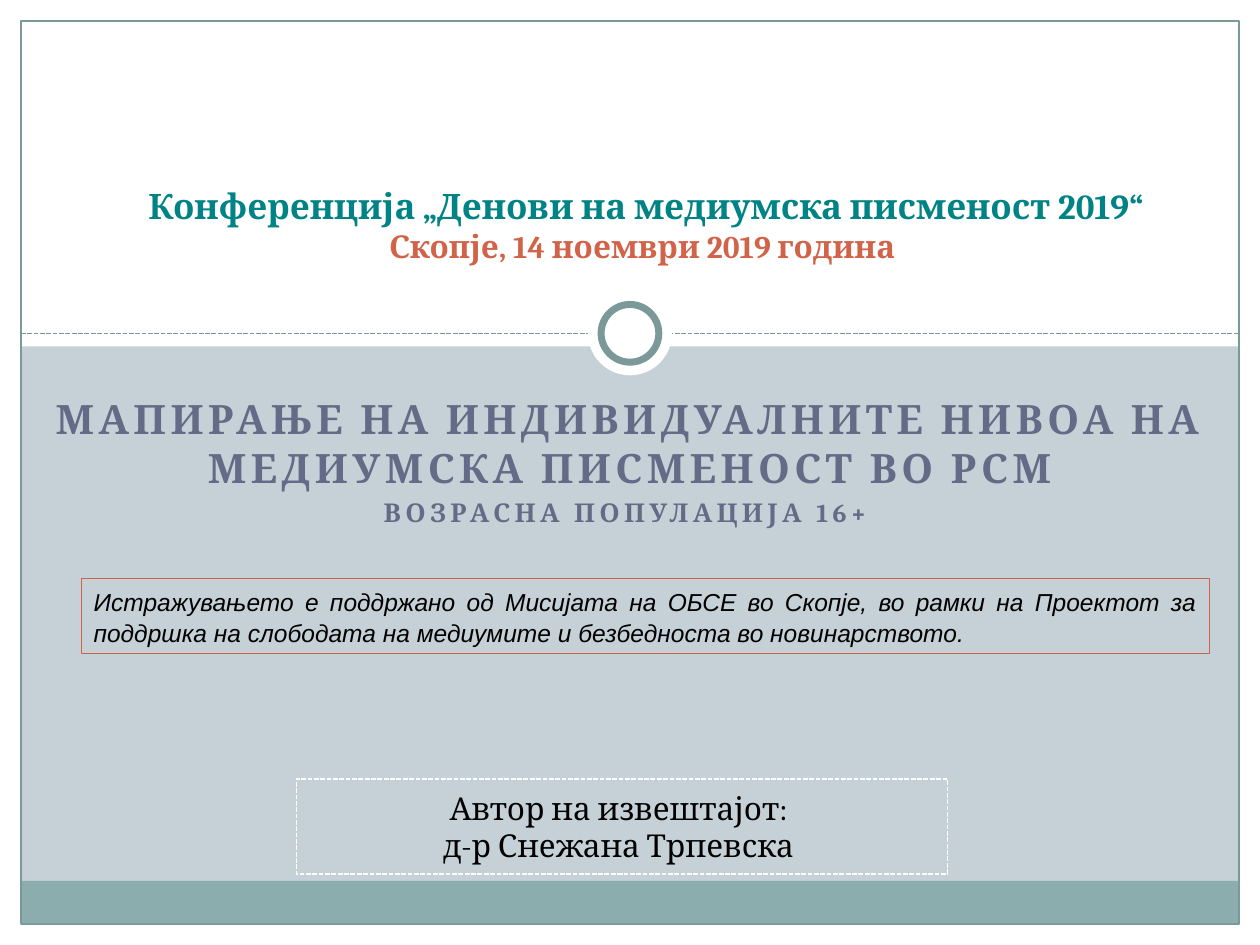
from lxml import etree
from pptx import Presentation
from pptx.dml.color import RGBColor
from pptx.enum import dml, shapes, text
from pptx.oxml import ns
from pptx.util import Pt

COLORS = {
    "backdrop": "C5D1D7", "white": "FFFFFF", "band": "8CADAE", "frame": "7C999A",
    "heading": "646B86", "teal": "008385", "rust": "D16349", "black": "000000",
}
RECT, OVAL = shapes.MSO_SHAPE.RECTANGLE, shapes.MSO_SHAPE.OVAL
CENTER, JUSTIFY = text.PP_ALIGN.CENTER, text.PP_ALIGN.JUSTIFY
TOP, MIDDLE, BOTTOM = text.MSO_ANCHOR.TOP, text.MSO_ANCHOR.MIDDLE, text.MSO_ANCHOR.BOTTOM


def add_panel(kind, box, fill=None, line=None, width=0.75, dash=None):
    panel = slide.shapes.add_shape(kind, *map(Pt, box))
    panel.shadow.inherit = False
    if fill:
        panel.fill.solid()
        panel.fill.fore_color.rgb = RGBColor.from_string(COLORS[fill])
    else:
        panel.fill.background()
    if line:
        panel.line.color.rgb = RGBColor.from_string(COLORS[line])
        panel.line.width = Pt(width)
        panel.line.dash_style = dash
    else:
        panel.line.fill.background()
    return panel


def write_lines(holder, anchor, lines):
    frame = holder.text_frame
    frame.word_wrap = True
    frame.vertical_anchor = anchor
    for index, (words, color, font_format, layout) in enumerate(lines):
        paragraph = frame.paragraphs[0] if index == 0 else frame.add_paragraph()
        for key, value in layout.items():
            setattr(paragraph, key, value)
        run = paragraph.add_run()
        run.text = words
        for key, value in font_format.items():
            setattr(run.font, key, value)
        run.font.color.rgb = RGBColor.from_string(COLORS[color])


deck = Presentation()
deck.slide_width, deck.slide_height = Pt(720), Pt(540)
slide = deck.slides.add_slide(deck.slide_layouts[6])
slide.background.fill.solid()
slide.background.fill.fore_color.rgb = RGBColor.from_string(COLORS["backdrop"])

margin = 12
for box in [
    (0, 540 - margin, 720, margin),
    (720 - margin, 0, margin, 540),
    (0, 0, margin, 540),
    (0, 0, 720, 198),
]:
    add_panel(RECT, box, "white")
add_panel(RECT, (margin, 503.3, 720 - 2 * margin, 24.7), "band")

divider = slide.shapes.add_connector(
    shapes.MSO_CONNECTOR.STRAIGHT, Pt(margin), Pt(190.6), Pt(720 - margin), Pt(190.6))
divider.line.color.rgb = RGBColor.from_string(COLORS["frame"])
divider.line.width = Pt(0.9)
divider.line.dash_style = dml.MSO_LINE.SQUARE_DOT
etree.SubElement(divider._element.spPr, ns.qn("a:effectLst"))

add_panel(RECT, (margin, margin, 720 - 2 * margin, 540 - 2 * margin), line="frame")
add_panel(OVAL, (336, 166.5, 48, 48), "white")
add_panel(OVAL, (343.5, 174, 33, 33), "white", "frame", 4)

subject = slide.shapes.add_textbox(Pt(12), Pt(221.8), Pt(696), Pt(102))
write_lines(subject, TOP, [
    ("МАПИРАЊЕ НА ИНДИВИДУАЛНИТЕ НИВОА НА МЕДИУМСКА ПИСМЕНОСТ ВО РСМ", "heading",
     {"size": Pt(23.1), "name": "Cambria", "bold": True},
     {"alignment": CENTER, "space_before": Pt(4.6)}),
    ("ВОЗРАСНА ПОПУЛАЦИЈА 16+ ", "heading",
     {"size": Pt(14.8), "name": "Cambria", "bold": True},
     {"alignment": CENTER, "space_before": Pt(3)}),
])
for paragraph in subject.text_frame.paragraphs:
    paragraph.runs[0].font._element.set("spc", "250")

conference = slide.shapes.add_textbox(Pt(36), Pt(70.6), Pt(666), Pt(84.2))
write_lines(conference, BOTTOM, [
    ("Конференција „Денови на медиумска писменост 2019“", "teal",
     {"size": Pt(20), "name": "Cambria", "bold": True}, {"alignment": CENTER}),
    ("Скопје, 14 ноември 2019 година ", "rust",
     {"size": Pt(18), "name": "Cambria", "bold": True}, {"alignment": CENTER}),
])

support = add_panel(RECT, (46.4, 330.5, 644.6, 42.8), line="rust")
write_lines(support, TOP, [
    ("Истражувањето е поддржано од Мисијата на ОБСЕ во Скопје, во рамки на Проектот за "
     "поддршка на слободата на медиумите и безбедноста во новинарството.", "black",
     {"size": Pt(14), "name": "Arial", "italic": True},
     {"alignment": JUSTIFY, "line_spacing": 1.07, "space_after": Pt(8)}),
])

author = add_panel(RECT, (169.4, 445, 372, 54.4), line="white", width=0.9,
                   dash=dml.MSO_LINE.SQUARE_DOT)
write_lines(author, MIDDLE, [
    (words, "black", {"size": Pt(18), "name": "Cambria"}, {"alignment": CENTER})
    for words in ("Автор на извештајот: ", "д-р Снежана Трпевска ")
])

deck.save("out.pptx")
